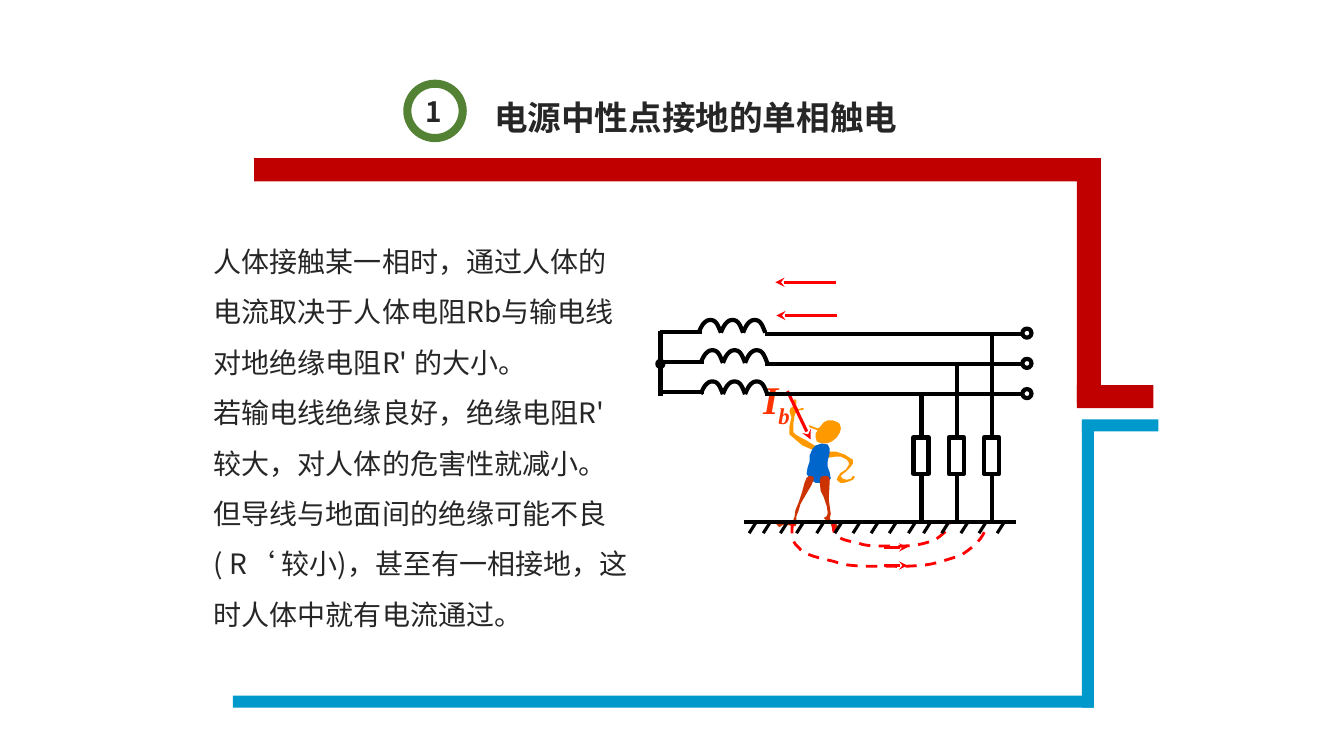
import pptx
import pptx.dml.color
import pptx.enum.dml
import pptx.enum.shapes
import pptx.enum.text
import pptx.oxml.ns
import pptx.util
from lxml import etree

Inches = pptx.util.Inches
Pt = pptx.util.Pt
RGBColor = pptx.dml.color.RGBColor
Shape = pptx.enum.shapes.MSO_SHAPE
Align = pptx.enum.text.PP_ALIGN
Anchor = pptx.enum.text.MSO_ANCHOR
qn = pptx.oxml.ns.qn

BLACK = RGBColor(0x00, 0x00, 0x00)
INK = RGBColor(0x26, 0x26, 0x26)
RED = RGBColor(0xFF, 0x00, 0x00)
LABEL = RGBColor(0xFF, 0x33, 0x00)
SKIN = RGBColor(0xFF, 0x99, 0x00)
SHIRT = RGBColor(0x00, 0x66, 0xCC)
LEGS = RGBColor(0xCC, 0x33, 0x00)
CRIMSON = RGBColor(0xC0, 0x00, 0x00)
CYAN = RGBColor(0x00, 0x99, 0xCC)
GREEN = RGBColor(0x54, 0x82, 0x35)
SANS = "Noto Sans CJK SC"
SERIF = "Times New Roman"

TITLE = "电源中性点接地的单相触电"
BODY = [
    "人体接触某一相时，通过人体的电流取决于人体电阻Rb与输电线对地绝缘电阻R' 的大小。",
    "若输电线绝缘良好，绝缘电阻R' 较大，对人体的危害性就减小。但导线与地面间的绝缘可能不良"
    "( R‘ 较小)，甚至有一相接地，这时人体中就有电流通过。",
]

BARS = [
    (10.68, 3.82, 0.76, 0.23, CRIMSON), (10.68, 1.72, 0.24, 2.28, CRIMSON),
    (2.52, 1.57, 8.4, 0.23, CRIMSON), (10.73, 4.16, 0.76, 0.12, CYAN),
    (10.73, 4.18, 0.12, 2.84, CYAN), (2.31, 6.9, 8.54, 0.12, CYAN),
]

HEAD = [(8.13, 4.24), (8.17, 4.19), (8.21, 4.17), (8.26, 4.17), (8.31, 4.19), (8.33, 4.21),
        (8.34, 4.25), (8.33, 4.29), (8.3, 4.34), (8.25, 4.38), (8.2, 4.4), (8.16, 4.4),
        (8.12, 4.39), (8.1, 4.38), (8.09, 4.34), (8.09, 4.3), (8.11, 4.27), (8.03, 4.24),
        (8.02, 4.22), (8.03, 4.22), (8.11, 4.25)]
RAISED_ARM = [(8.03, 4.39), (8.08, 4.42), (8.1, 4.42), (8.11, 4.44), (8.08, 4.47), (8.03, 4.45),
              (7.96, 4.42), (7.9, 4.37), (7.83, 4.31), (7.83, 4.23), (7.85, 4.14), (7.83, 4.08),
              (7.84, 4.05), (7.87, 4.03), (7.89, 4.03), (7.87, 3.98), (7.88, 3.96), (7.9, 3.97),
              (7.9, 4.03), (7.92, 4.06), (7.95, 4.05), (7.97, 4.05), (7.97, 4.06), (7.96, 4.07),
              (7.93, 4.07), (7.91, 4.08), (7.89, 4.1), (7.88, 4.13), (7.87, 4.19), (7.87, 4.29),
              (7.89, 4.31), (7.94, 4.34), (8, 4.37)]
LOWER_ARM = [(8.15, 4.52), (8.17, 4.5), (8.22, 4.48), (8.29, 4.48), (8.38, 4.51), (8.44, 4.55),
             (8.46, 4.56), (8.46, 4.6), (8.43, 4.64), (8.39, 4.68), (8.35, 4.71), (8.34, 4.73),
             (8.36, 4.75), (8.4, 4.76), (8.44, 4.75), (8.46, 4.72), (8.48, 4.73), (8.46, 4.76),
             (8.41, 4.78), (8.37, 4.79), (8.34, 4.79), (8.32, 4.78), (8.3, 4.76), (8.31, 4.73),
             (8.34, 4.69), (8.39, 4.66), (8.42, 4.61), (8.42, 4.59), (8.4, 4.56), (8.34, 4.53),
             (8.29, 4.53), (8.22, 4.54), (8.17, 4.56)]
TORSO = [(8.03, 4.52), (8.06, 4.45), (8.09, 4.42), (8.15, 4.4), (8.21, 4.41), (8.23, 4.45),
         (8.23, 4.49), (8.21, 4.57), (8.21, 4.63), (8.23, 4.69), (8.24, 4.75), (8.21, 4.77),
         (8.14, 4.79), (8.09, 4.79), (8.04, 4.76), (8, 4.7), (8.01, 4.64), (8.03, 4.58)]
RIGHT_LEG = [(8.14, 4.73), (8.19, 4.72), (8.22, 4.73), (8.23, 4.76), (8.22, 4.95), (8.24, 5.1),
             (8.23, 5.14), (8.24, 5.16), (8.29, 5.19), (8.32, 5.24), (8.31, 5.25), (8.27, 5.27),
             (8.26, 5.26), (8.24, 5.2), (8.22, 5.18), (8.17, 5.14), (8.2, 5.12), (8.21, 5.09),
             (8.2, 5.02), (8.17, 4.93), (8.14, 4.87), (8.13, 4.79)]
LEFT_LEG = [(7.98, 4.79), (8, 4.74), (8.03, 4.72), (8.07, 4.73), (8.07, 4.76), (8.05, 4.81),
            (7.98, 4.93), (7.94, 5), (7.92, 5.07), (7.9, 5.12), (7.9, 5.17), (7.91, 5.18),
            (7.89, 5.22), (7.86, 5.22), (7.82, 5.21), (7.76, 5.21), (7.73, 5.23), (7.7, 5.2),
            (7.7, 5.17), (7.72, 5.16), (7.77, 5.16), (7.86, 5.18), (7.88, 5.13), (7.89, 5.06),
            (7.92, 4.99), (7.95, 4.9)]
INNER_PATH = [(8.27, 5.17), (8.27, 5.2), (8.25, 5.28), (8.3, 5.31), (8.34, 5.36), (8.44, 5.37),
              (8.52, 5.39), (8.61, 5.43), (8.8, 5.41), (8.91, 5.42), (9.1, 5.41), (9.1, 5.41),
              (9.27, 5.36), (9.32, 5.32), (9.42, 5.26), (9.42, 5.18)]
OUTER_PATH = [(7.86, 5.18), (7.86, 5.23), (7.83, 5.37), (7.92, 5.43), (7.97, 5.51), (8.15, 5.54),
              (8.27, 5.57), (8.43, 5.64), (8.74, 5.61), (8.92, 5.62), (9.25, 5.61), (9.24, 5.6),
              (9.53, 5.51), (9.62, 5.45), (9.78, 5.34), (9.78, 5.2)]
COIL_TURN = [(0, 0), (0.02, -0.05), (0.04, -0.09), (0.07, -0.11), (0.09, -0.13),
             (0.14, -0.13), (0.16, -0.11), (0.19, -0.09), (0.21, -0.02), (0.22, 0)]
TURN_WIDTH = 0.22


def sample_curve(controls, steps=8):
    """Turn chained cubic Bézier control points into a list of points."""
    points = [controls[0]]
    for start in range(0, len(controls) - 1, 3):
        a, b, c, d = controls[start:start + 4]
        for step in range(1, steps + 1):
            t = step / steps
            u = 1 - t
            points.append(tuple(
                u**3 * a[i] + 3 * u * u * t * b[i] + 3 * u * t * t * c[i] + t**3 * d[i]
                for i in (0, 1)))
    return points


class Sketch:
    def __init__(self, page):
        self.page = page

    def paint(self, shape, fill=None, line=None, width=3.0):
        shape.shadow.inherit = False
        if fill is None:
            shape.fill.background()
        else:
            shape.fill.solid()
            shape.fill.fore_color.rgb = fill
        if line is None:
            shape.line.fill.background()
        else:
            shape.line.color.rgb = line
            shape.line.width = Pt(width)
        return shape

    def preset(self, kind, left, top, width, height, **style):
        shape = self.page.shapes.add_shape(
            kind, Inches(left), Inches(top), Inches(width), Inches(height))
        return self.paint(shape, **style)

    def outline(self, points, closed=False, **style):
        corners = [(Inches(x), Inches(y)) for x, y in points]
        builder = self.page.shapes.build_freeform(*corners[0], scale=1.0)
        builder.add_line_segments(corners[1:], close=closed)
        return self.paint(builder.convert_to_shape(), **style)

    def line(self, x1, y1, x2, y2, color=BLACK, width=3.0, arrow=False):
        connector = self.page.shapes.add_connector(
            pptx.enum.shapes.MSO_CONNECTOR.STRAIGHT,
            Inches(x1), Inches(y1), Inches(x2), Inches(y2))
        connector.line.color.rgb = color
        connector.line.width = Pt(width)
        if arrow:
            etree.SubElement(connector.line._get_or_add_ln(), qn("a:tailEnd"), type="stealth")
        etree.SubElement(connector._element.spPr, qn("a:effectLst"))

    def text(self, box, area, lines, size, color=INK, font=SANS, bold=False, italic=False,
             align=Align.LEFT, anchor=Anchor.TOP, spacing=1.0):
        box.left, box.top, box.width, box.height = map(Inches, area)
        frame = box.text_frame
        frame.text = "\n".join(lines)
        frame.word_wrap = True
        frame.auto_size = pptx.enum.text.MSO_AUTO_SIZE.NONE
        frame.vertical_anchor = anchor
        for para in frame.paragraphs:
            properties = para._p.get_or_add_pPr()
            properties.set("marL", "0")
            properties.set("indent", "0")
            etree.SubElement(properties, qn("a:buNone"))
            para.alignment = align
            para.line_spacing = spacing
            para.space_before = Pt(0)
            for span in para.runs:
                self.format(span, size, color, font, bold, italic)
        return box

    def format(self, span, size, color, font, bold, italic):
        span.font.size = Pt(size)
        span.font.color.rgb = color
        span.font.bold = bold
        span.font.italic = italic
        span.font.name = font
        etree.SubElement(span.font._element, qn("a:ea"), typeface=font)

    def text_box(self, area, lines, size, **style):
        box = self.page.shapes.add_textbox(*map(Inches, area))
        return self.text(box, area, lines, size, **style)


def draw_person(sketch):
    label = sketch.text_box((7.47, 3.77, 0.54, 0.44), ["I"], 28, color=LABEL, font=SERIF,
                            bold=True, italic=True, anchor=Anchor.MIDDLE)
    subscript = label.text_frame.paragraphs[0].add_run()
    subscript.text = "b"
    sketch.format(subscript, 28, LABEL, SERIF, True, True)
    subscript.font._element.set("baseline", "-25000")
    for points, color in ((HEAD, SKIN), (RAISED_ARM, SKIN), (LOWER_ARM, SKIN),
                          (TORSO, SHIRT), (RIGHT_LEG, LEGS), (LEFT_LEG, LEGS)):
        sketch.outline(points, closed=True, fill=color)


def draw_currents(sketch):
    for controls in (INNER_PATH, OUTER_PATH):
        curve = sketch.outline(sample_curve(controls), line=RED, width=2)
        curve.line.dash_style = pptx.enum.dml.MSO_LINE.DASH
    for y in (5.43, 5.61):
        sketch.line(8.77, y, 9, y, RED, 2, arrow=True)
    for x, y in ((8.29, 2.8), (8.3, 3.13)):
        sketch.line(x, y, x - 0.6, y, RED, 2.25, arrow=True)
    sketch.line(7.81, 3.88, 8.04, 4.36, RED, 2.25, arrow=True)


def draw_circuit(sketch):
    sketch.line(6.55, 3.28, 6.55, 3.93)
    turn = sample_curve(COIL_TURN)
    for coil_x, coil_y, lead_y, wire_y in ((6.93, 3.3, 3.29, 3.31), (6.95, 3.6, 3.59, 3.61),
                                           (6.95, 3.91, 3.89, 3.91)):
        sketch.line(6.55, lead_y, coil_x + 0.03, lead_y)
        for index in range(3):
            left = coil_x + index * TURN_WIDTH
            sketch.outline([(left + x, coil_y + y) for x, y in turn], line=BLACK)
        sketch.line(7.59, wire_y, 10.13, wire_y)
        sketch.preset(Shape.OVAL, 10.14, wire_y - 0.05, 0.09, 0.09, line=BLACK)
    for x, wire_y in ((9.14, 3.89), (9.49, 3.63), (9.84, 3.3)):
        sketch.line(x, wire_y, x, 4.34)
        sketch.preset(Shape.RECTANGLE, x - 0.08, 4.34, 0.15, 0.36, line=BLACK)
        sketch.line(x, 4.7, x, 5.17)
    sketch.preset(Shape.OVAL, 6.52, 3.58, 0.06, 0.06, line=BLACK)
    sketch.line(7.38, 5.18, 10.08, 5.18)
    for x in (7.5, 7.64, 7.81, 7.97, 8.17, 8.35, 8.53, 8.71, 8.89, 9.08, 9.23, 9.41,
              9.6, 9.78, 9.96):
        sketch.line(x, 5.18, x - 0.07, 5.29, width=2.25)


def main():
    deck = pptx.Presentation()
    deck.slide_width, deck.slide_height = Inches(13.33), Inches(7.5)
    page = deck.slides.add_slide(deck.slide_layouts[1])
    sketch = Sketch(page)
    sketch.text(page.shapes.title, (4.8, 0.71, 4.31, 0.79), [TITLE], 24, bold=True, spacing=1.5)
    sketch.text(page.placeholders[1], (2.02, 2.21, 4.31, 4.14), BODY, 20, spacing=1.5)
    draw_person(sketch)
    draw_currents(sketch)
    draw_circuit(sketch)
    for left, top, width, height, color in BARS:
        sketch.preset(Shape.RECTANGLE, left, top, width, height, fill=color)
    ring = sketch.preset(Shape.DONUT, 4, 0.79, 0.63, 0.62, fill=GREEN)
    ring.adjustments[0] = 0.13
    sketch.text_box((3.99, 0.89, 0.63, 0.44), ["1"], 20, bold=True, align=Align.CENTER)
    deck.save("out.pptx")


if __name__ == "__main__":
    main()
